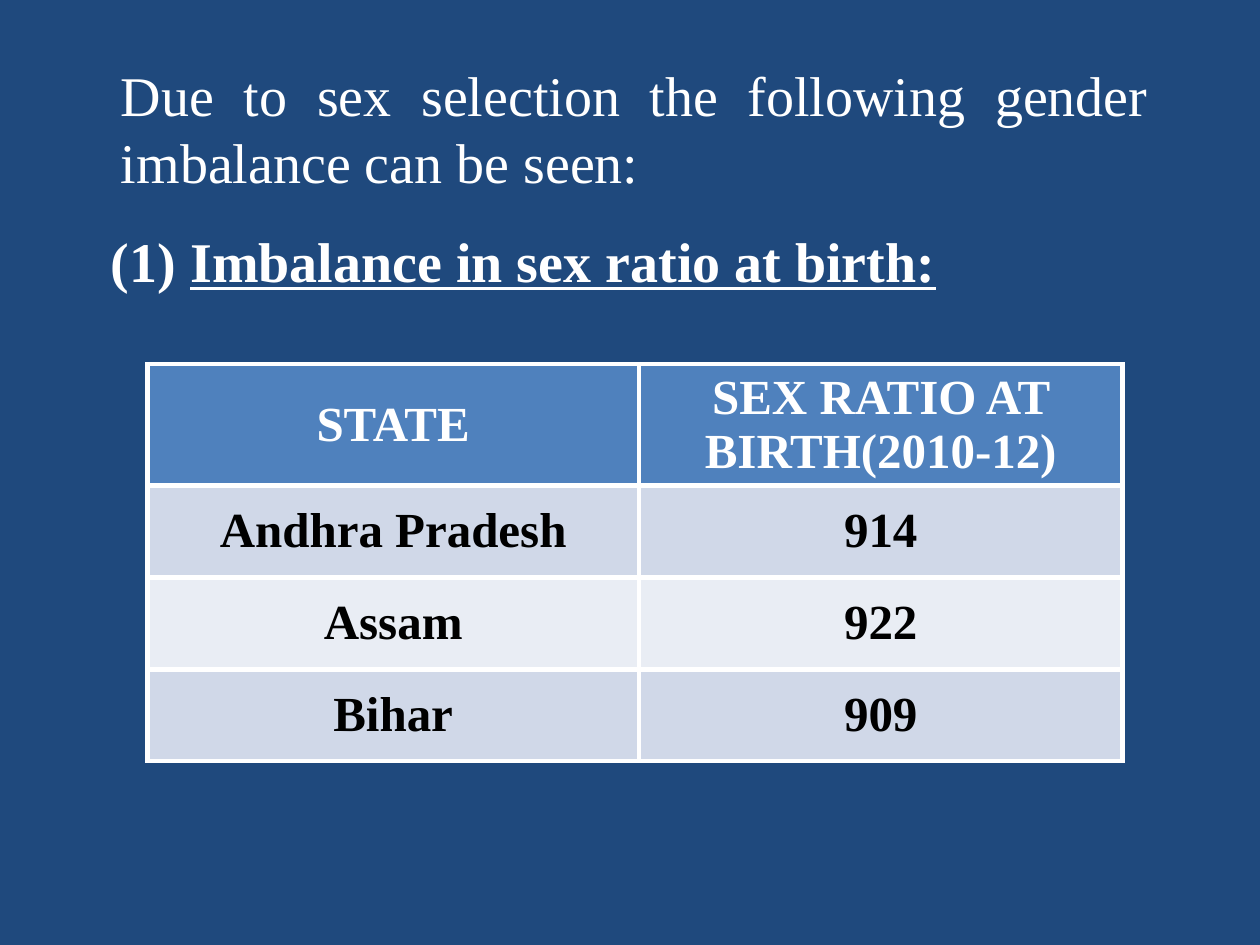
from dataclasses import dataclass

from lxml.etree import SubElement
from pptx import Presentation
from pptx.dml.color import RGBColor
from pptx.enum.text import MSO_ANCHOR, MSO_AUTO_SIZE, PP_ALIGN
from pptx.oxml.ns import qn
from pptx.util import Inches, Pt


@dataclass(frozen=True)
class Theme:
    font: str = "Times New Roman"
    background: RGBColor = RGBColor(0x1F, 0x49, 0x7D)
    white: RGBColor = RGBColor(0xFF, 0xFF, 0xFF)
    black: RGBColor = RGBColor(0x00, 0x00, 0x00)
    header: RGBColor = RGBColor(0x4F, 0x81, 0xBD)
    bands: tuple = (RGBColor(0xD0, 0xD8, 0xE8), RGBColor(0xE9, 0xED, 0xF4))
    text_size: Pt = Pt(32)
    table_size: Pt = Pt(28)
    border: Pt = Pt(3)


@dataclass(frozen=True)
class StateRatio:
    state: str
    ratio: str


THEME = Theme()
HEADING = StateRatio("STATE", "SEX RATIO AT BIRTH(2010-12)")
RATIOS = [
    StateRatio("Andhra Pradesh", "914"),
    StateRatio("Assam", "922"),
    StateRatio("Bihar", "909"),
]


def format_run(run, size: Pt, color: RGBColor, bold: bool = False) -> None:
    run.font.name = THEME.font
    run.font.size = size
    run.font.color.rgb = color
    run.font.bold = bold


def place(shape, left: float, top: float, width: float, height: float) -> None:
    shape.left, shape.top = Inches(left), Inches(top)
    shape.width, shape.height = Inches(width), Inches(height)
    shape.text_frame.auto_size = MSO_AUTO_SIZE.NONE


def add_borders(cell) -> None:
    """Draw all four sides; the lines must come before the fill in the XML."""
    properties = cell._tc.get_or_add_tcPr()
    for position, side in enumerate(("a:lnL", "a:lnR", "a:lnT", "a:lnB")):
        line = SubElement(properties, qn(side), w=str(THEME.border))
        fill = SubElement(line, qn("a:solidFill"))
        SubElement(fill, qn("a:srgbClr"), val=str(THEME.white))
        properties.insert(position, line)


def fill_cell(cell, text: str, fill: RGBColor, color: RGBColor) -> None:
    cell.text_frame.text = text
    cell.vertical_anchor = MSO_ANCHOR.MIDDLE
    paragraph = cell.text_frame.paragraphs[0]
    paragraph.alignment = PP_ALIGN.CENTER
    format_run(paragraph.runs[0], THEME.table_size, color, bold=True)
    cell.fill.solid()
    cell.fill.fore_color.rgb = fill
    add_borders(cell)


def write_introduction(title) -> None:
    place(title, 0.86, 0.39, 8.36, 1.25)
    title.text_frame.text = "Due to sex selection the following gender imbalance can be seen:"
    title.text_frame.vertical_anchor = MSO_ANCHOR.MIDDLE
    paragraph = title.text_frame.paragraphs[0]
    paragraph.alignment = PP_ALIGN.JUSTIFY
    format_run(paragraph.runs[0], THEME.text_size, THEME.white)


def write_point(body) -> None:
    place(body, 0.78, 1.75, 8.72, 4.95)
    point = body.text_frame.paragraphs[0]
    for text, underlined in (("(1) ", False), ("Imbalance in sex ratio at birth:", True)):
        run = point.add_run()
        run.text = text
        format_run(run, THEME.text_size, THEME.white, bold=True)
        run.font.underline = underlined
    properties = point._p.get_or_add_pPr()
    properties.set("marL", str(Inches(0.56)))
    properties.set("indent", str(Inches(-0.56)))
    SubElement(properties, qn("a:buNone"))


def add_ratio_table(slide) -> None:
    rows = [HEADING, *RATIOS]
    table = slide.shapes.add_table(
        len(rows), 2, Inches(1.17), Inches(2.89), Inches(7.74), Inches(2.98)
    ).table
    for column, width in zip(table.columns, (3.9, 3.84)):
        column.width = Inches(width)
    for index, entry in enumerate(rows):
        is_header = index == 0
        table.rows[index].height = Inches(0.79 if is_header else 0.73)
        fill = THEME.header if is_header else THEME.bands[(index - 1) % 2]
        color = THEME.white if is_header else THEME.black
        for column, text in enumerate((entry.state, entry.ratio)):
            fill_cell(table.cell(index, column), text, fill, color)


def main() -> None:
    presentation = Presentation()
    presentation.slide_width, presentation.slide_height = Inches(10), Inches(7.5)
    slide = presentation.slides.add_slide(presentation.slide_layouts[1])
    slide.background.fill.solid()
    slide.background.fill.fore_color.rgb = THEME.background
    write_introduction(slide.shapes.title)
    write_point(slide.placeholders[1])
    add_ratio_table(slide)
    presentation.save("out.pptx")


if __name__ == "__main__":
    main()
